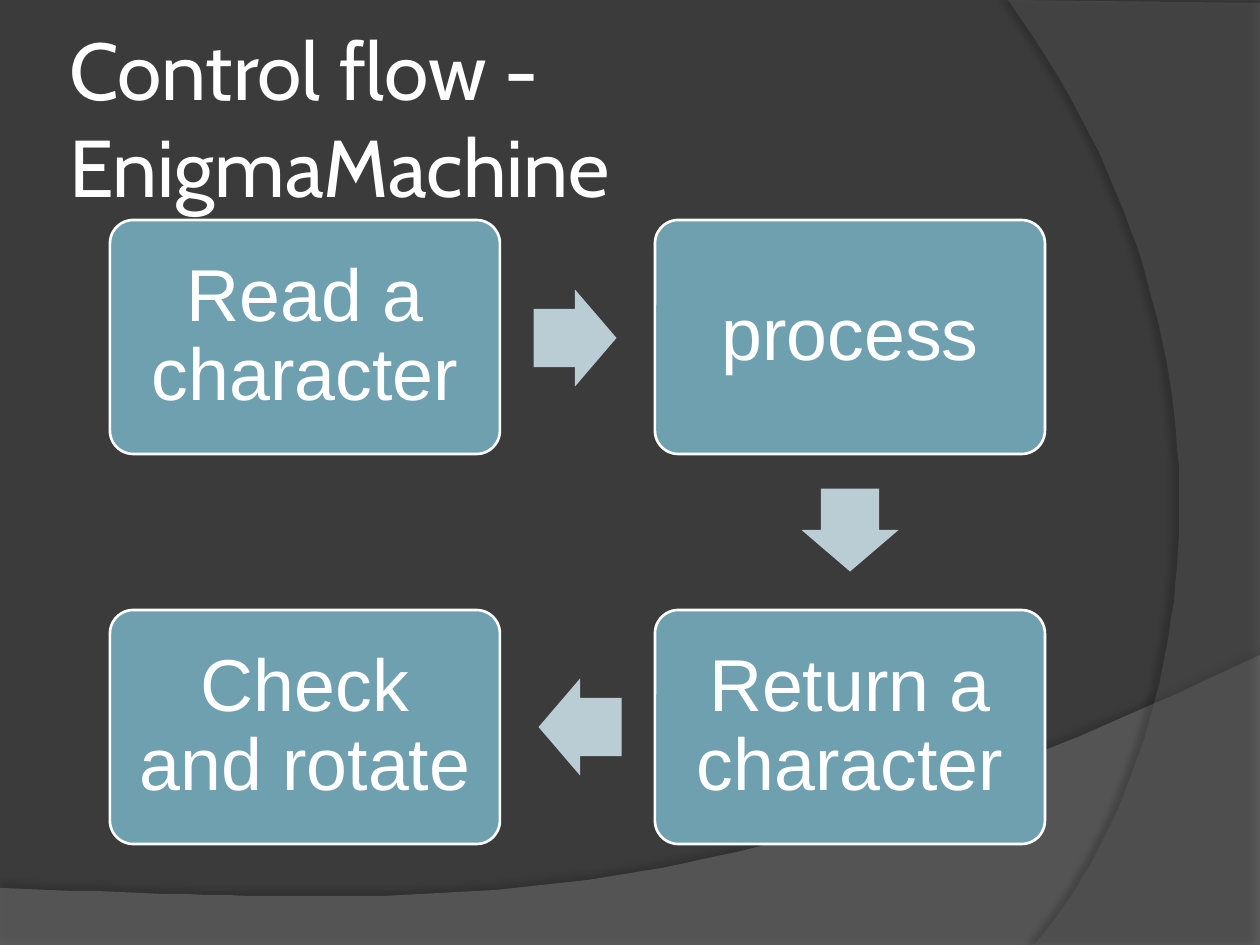
from dataclasses import dataclass

import pptx
import pptx.dml.color
import pptx.enum.shapes
import pptx.enum.text
import pptx.oxml
import pptx.oxml.ns
import pptx.util

SCALE = 914400 / 126  # EMU per px
KIND = pptx.enum.shapes.MSO_SHAPE
ALIGN = pptx.enum.text.PP_ALIGN
MIDDLE = pptx.enum.text.MSO_ANCHOR.MIDDLE
Point = tuple[int, int]

WHITE, TEAL, PALE = "FFFFFF", "6EA0B0", "BACDD4"
LEFT, TOP, WIDE, HIGH = 110, 220, 390, 234
STEP_X, STEP_Y = 545, 390
ARROW_W, ARROW_H = 83, 97


@dataclass
class Step:
    text: str
    col: int
    row: int


@dataclass
class Arrow:
    x: int
    y: int
    turn: int


@dataclass
class Swoosh:
    start: Point
    edges: list[Point]
    curve: tuple[Point, Point, Point]
    color: str
    alpha: int
    dark: int
    dist: float
    angle: int


SWOOSHES = [
    Swoosh((0, 888), [(0, 946), (1260, 946), (1260, 655)],
           ((704, 919), (493, 906), (0, 888)), "7F7F7F", 45, 35, 3.5, 270),
    Swoosh((1260, 3), [(1260, 945), (1034, 945)],
           ((1178, 780), (1283, 378), (1008, 0)), "5E5E5E", 40, 45, 4, 180),
]
STEPS = [
    Step("Read a character", 0, 0),
    Step("process", 1, 0),
    Step("Return a character", 1, 1),
    Step("Check and rotate", 0, 1),
]
ARROWS = [Arrow(575, 338, 0), Arrow(850, 530, 90), Arrow(580, 727, 180)]


def px(size: float) -> pptx.util.Emu:
    return pptx.util.Emu(round(size * SCALE))


def rgb(color: str) -> pptx.dml.color.RGBColor:
    return pptx.dml.color.RGBColor.from_string(color)


def paint(shape, color: str) -> None:
    shape.shadow.inherit = False
    shape.fill.solid()
    shape.fill.fore_color.rgb = rgb(color)
    shape.line.fill.background()


def write(shape, text: str, font: str, size: int, inset: int, align) -> None:
    frame = shape.text_frame
    frame.word_wrap = True
    frame.vertical_anchor = MIDDLE
    frame.margin_left = frame.margin_right = px(inset)
    frame.margin_top = frame.margin_bottom = px(inset)
    para = frame.paragraphs[0]
    para.alignment = align
    run = para.add_run()
    run.text = text
    run.font.name = font
    run.font.size = pptx.util.Pt(size)
    run.font.color.rgb = rgb(WHITE)


def bezier(start: Point, curve: tuple[Point, Point, Point],
           count: int = 60) -> list[tuple[float, float]]:
    spots = []
    for i in range(1, count + 1):
        t = i / count
        u = 1 - t
        parts = (u ** 3, 3 * u * u * t, 3 * u * t * t, t ** 3)
        spots.append(tuple(
            sum(part * spot[axis] for part, spot in zip(parts, (start, *curve)))
            for axis in (0, 1)))
    return spots


def draw_swoosh(shapes, item: Swoosh) -> None:
    pen = shapes.build_freeform(*item.start, scale=SCALE)
    pen.add_line_segments(item.edges + bezier(item.edges[-1], item.curve))
    shape = pen.convert_to_shape()
    paint(shape, item.color)
    # Transparency and soft shadow
    props = shape._element.spPr
    fill = props.find(".//" + pptx.oxml.ns.qn("a:srgbClr"))
    space = pptx.oxml.ns.nsdecls("a")
    fill.append(pptx.oxml.parse_xml(f'<a:alpha {space} val="{item.alpha * 1000}"/>'))
    props.find(pptx.oxml.ns.qn("a:effectLst")).append(pptx.oxml.parse_xml(
        f'<a:outerShdw {space} blurRad="{pptx.util.Pt(4)}" '
        f'dist="{pptx.util.Pt(item.dist)}" dir="{item.angle * 60000}" '
        f'algn="ctr" rotWithShape="0"><a:srgbClr val="000000">'
        f'<a:alpha val="{item.dark * 1000}"/></a:srgbClr></a:outerShdw>'))


def draw_step(shapes, step: Step) -> None:
    box = shapes.add_shape(
        KIND.ROUNDED_RECTANGLE, px(LEFT + step.col * STEP_X),
        px(TOP + step.row * STEP_Y), px(WIDE), px(HIGH))
    box.adjustments[0] = 0.1
    paint(box, TEAL)
    box.line.color.rgb = rgb(WHITE)
    box.line.width = pptx.util.Pt(1.5)
    write(box, step.text, "Arial", 42, 21, ALIGN.CENTER)
    box.text_frame.paragraphs[0].line_spacing = 0.9


def draw_arrow(shapes, arrow: Arrow) -> None:
    shape = shapes.add_shape(
        KIND.RIGHT_ARROW, px(arrow.x - ARROW_W / 2), px(arrow.y - ARROW_H / 2),
        px(ARROW_W), px(ARROW_H))
    shape.adjustments[0] = 0.6
    shape.adjustments[1] = 0.5
    shape.rotation = arrow.turn
    paint(shape, PALE)


def main() -> None:
    deck = pptx.Presentation()
    deck.slide_width, deck.slide_height = px(1260), px(945)
    slide = deck.slides.add_slide(deck.slide_layouts[6])
    shapes = slide.shapes

    # Background
    slide.background.fill.solid()
    slide.background.fill.fore_color.rgb = rgb("3B3B3B")
    for item in SWOOSHES:
        draw_swoosh(shapes, item)

    # Title
    title = shapes.add_textbox(px(63), px(38), px(1029), px(158))
    write(title, "Control flow - EnigmaMachine", "Cabin", 46, 6, ALIGN.LEFT)

    # Flow
    for step in STEPS:
        draw_step(shapes, step)
    for arrow in ARROWS:
        draw_arrow(shapes, arrow)

    deck.save("out.pptx")


if __name__ == "__main__":
    main()
